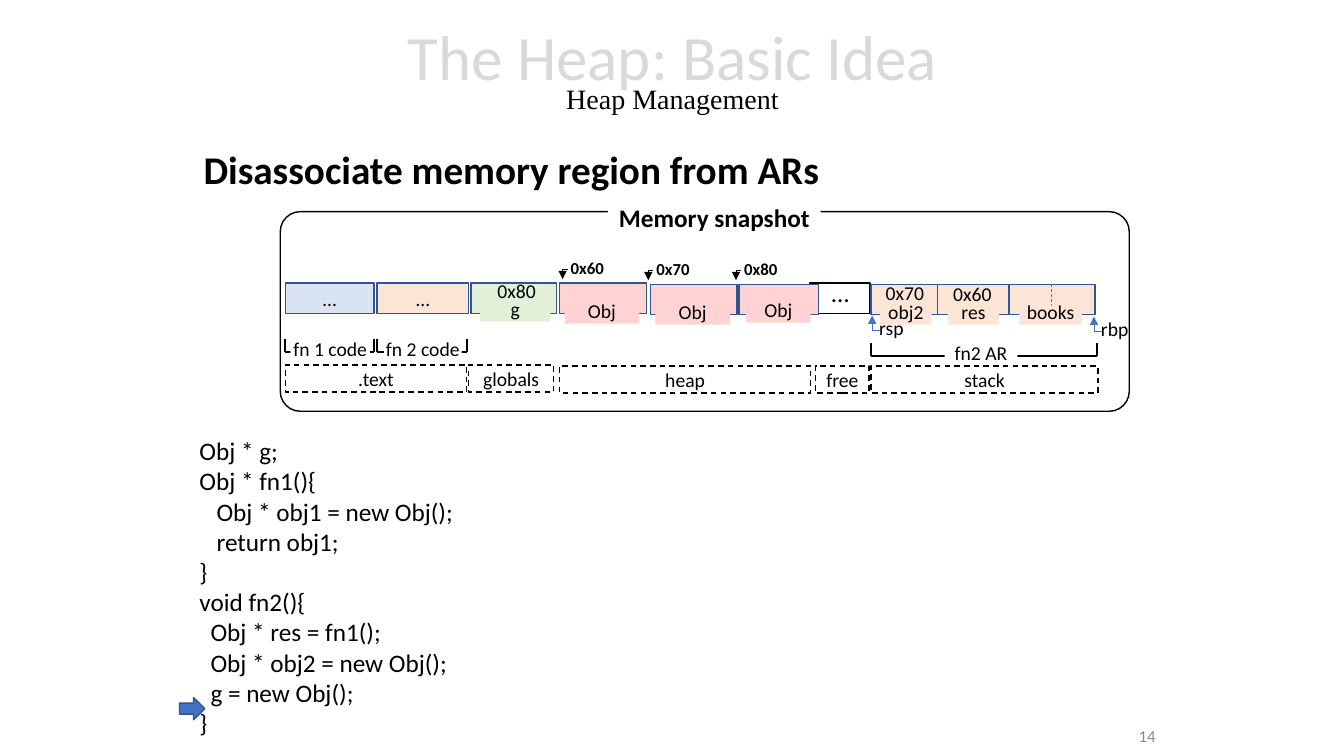
from lxml import etree
from pptx import Presentation
from pptx import util as u
from pptx.dml.color import RGBColor
from pptx.enum import dml, shapes, text
from pptx.oxml.ns import qn

HEX = {"white": "FFFFFF", "black": "000000", "pale": "D9D9D9", "gray": "8C8C8C",
       "blue": "4472C4", "edge": "325491", "sky": "DAE3F3", "peach": "FBE5D6",
       "green": "E2F0D9", "pink": "FFD3D3"}
MID, TOP = text.MSO_ANCHOR.MIDDLE, text.MSO_ANCHOR.TOP
LEFT, MIDST, RIGHT = text.PP_ALIGN.LEFT, text.PP_ALIGN.CENTER, text.PP_ALIGN.RIGHT
RECT = shapes.MSO_SHAPE.RECTANGLE


def rgb(name):
    return RGBColor.from_string(HEX[name])


def run(para, words, size, color="black", bold=False, face="Calibri"):
    bit = para.add_run()
    bit.text = words
    style = {"size": u.Pt(size), "bold": bold, "name": face}
    for key, val in style.items():
        setattr(bit.font, key, val)
    bit.font.color.rgb = rgb(color)


def frame(shape, anchor=MID, inset=0.0):
    body = shape.text_frame
    style = {"word_wrap": True, "vertical_anchor": anchor,
             "margin_left": u.Inches(inset), "margin_right": u.Inches(inset),
             "margin_top": u.Inches(inset / 2), "margin_bottom": u.Inches(inset / 2)}
    for key, val in style.items():
        setattr(body, key, val)
    return body


def area(slide, box, anchor=MID, inset=0.1):
    return frame(slide.shapes.add_textbox(*map(u.Inches, box)), anchor, inset)


def note(body, words, size=14, align=MIDST, space=None, **font):
    para = body.paragraphs[0]
    style = {"alignment": align, "line_spacing": space}
    for key, val in style.items():
        setattr(para, key, val)
    run(para, words, size, **font)
    return para


def block(slide, box, fill, edge=None, dash=False, kind=RECT):
    shape = slide.shapes.add_shape(kind, *map(u.Inches, box))
    shape.shadow.inherit = False
    shape.fill.solid()
    shape.fill.fore_color.rgb = rgb(fill)
    if edge:
        shape.line.color.rgb = rgb(edge)
        shape.line.width = u.Pt(1)
        if dash:
            shape.line.dash_style = dml.MSO_LINE.DASH
    else:
        shape.line.fill.background()
    return shape


def label(slide, box, words, fill):
    note(frame(block(slide, box, fill), TOP), words, space=u.Pt(13))


def rule(slide, x1, y1, x2, y2, color="black", width=0.5, head=False, dash=False):
    line = slide.shapes.add_connector(
        shapes.MSO_CONNECTOR.STRAIGHT, *map(u.Inches, (x1, y1, x2, y2)))
    line.line.color.rgb = rgb(color)
    line.line.width = u.Pt(width)
    if dash:
        line.line.dash_style = dml.MSO_LINE.DASH
    if head:
        etree.SubElement(line.line._get_or_add_ln(), qn("a:tailEnd"), type="triangle")
    etree.SubElement(line._element.spPr, qn("a:effectLst"))


def heading(slide, box):
    x, y, w, h = box
    para = note(area(slide, (x, y, w, 1.45)), "The Heap: Basic Idea", 45,
                space=0.7, color="pale")
    para.add_line_break()
    run(para, "Heap Management", 20, face="Times New Roman")
    lead = note(area(slide, (x + 0.25, y + 1.45, 8.12, 0.52), TOP),
                "Disassociate memory region from ARs", 28, LEFT, 0.8, bold=True)
    lead.space_before = u.Pt(10)


def cells(slide, x, y):
    # Strip of memory cells
    for dx, dy, w, fill, edge, words in [
            (0.05, 0.71, 0.88, "sky", "edge", "…"), (0.96, 0.71, 0.91, "peach", "edge", "…"),
            (1.89, 0.71, 0.85, "green", "edge", ""), (5.25, 0.71, 0.6, "white", "black", ""),
            (2.77, 0.71, 0.86, "pink", "edge", ""), (3.67, 0.72, 0.86, "pink", "edge", ""),
            (4.55, 0.72, 0.79, "pink", "edge", ""), (7.23, 0.72, 0.85, "peach", "edge", ""),
            (6.51, 0.72, 0.71, "peach", "edge", ""), (5.86, 0.72, 0.66, "peach", "edge", "")]:
        cell = block(slide, (x + dx, y + dy, w, 0.3), fill, edge)
        if words:
            note(frame(cell), words)
    note(area(slide, (x + 5.37, y + 0.6, 0.38, 0.4), TOP), "…", 18, LEFT)
    rule(slide, x + 7.65, y + 0.72, x + 7.65, y + 1.01, "blue", dash=True)
    # Names and values in the cells
    for words, dx, dy, w, fill in [
            ("g", 1.98, 0.9, 0.7, "green"), ("0x80", 2.06, 0.72, 0.57, "green"),
            ("Obj", 2.82, 0.92, 0.74, "pink"), ("Obj", 3.72, 0.93, 0.74, "pink"),
            ("Obj", 4.62, 0.91, 0.64, "pink"),
            ("obj2", 5.95, 0.93, 0.51, "peach"), ("0x70", 5.91, 0.74, 0.57, "peach"),
            ("res", 6.62, 0.93, 0.51, "peach"), ("0x60", 6.58, 0.75, 0.57, "peach"),
            ("books", 7.33, 0.93, 0.62, "peach")]:
        label(slide, (x + dx, y + dy, w, 0.19), words, fill)


def marks(slide, x, y):
    # Heap addresses
    for words, dx, dy in [("0x60", 2.8, 0.57), ("0x70", 3.65, 0.58), ("0x80", 4.52, 0.58)]:
        px, py = x + dx, y + dy
        rule(slide, px, py, px, py + 0.1, head=True)
        rule(slide, px, py, px + 0.05, py)
        note(area(slide, (px + 0.08, py - 0.11, 0.5, 0.2), TOP, 0), words, 12, LEFT, bold=True)
    # Stack registers
    for words, dx, dy in [("rsp", 5.87, 1.18), ("rbp", 8.07, 1.19)]:
        px, py = x + dx, y + dy
        rule(slide, px + 0.08, py, px, py, "blue")
        rule(slide, px, py, px, py - 0.15, "blue", head=True)
        note(area(slide, (px + 0.07, py - 0.08, 0.4, 0.2), TOP, 0), words,
             align=LEFT, space=u.Pt(12))


def spans(slide, x, y):
    # Brackets
    for words, left, right, dy, dx, w in [
            ("fn 1 code", 0.05, 0.93, 1.26, 0.1, 0.79),
            ("fn 2 code", 0.96, 1.85, 1.26, 1.03, 0.77),
            ("fn2 AR", 5.86, 8.1, 1.3, 6.59, 0.72)]:
        top, base = y + dy, y + dy + 0.13
        for side in (left, right):
            rule(slide, x + side, top, x + side, base, width=1.5)
        rule(slide, x + left, base, x + right, base, width=1.5)
        label(slide, (x + dx, base - 0.1, w, 0.19), words, "white")
    # Memory segments
    for words, dx, dy, w in [(".text", 0.05, 1.52, 1.8), ("globals", 1.87, 1.52, 0.84),
                             ("heap", 2.77, 1.53, 2.49), ("free", 5.31, 1.53, 0.53),
                             ("stack", 5.86, 1.53, 2.25)]:
        part = block(slide, (x + dx, y + dy, w, 0.27), "white", "black", True)
        note(frame(part), words)


def memory(slide, box):
    x, y, w, h = box
    panel = block(slide, box, "white", "black", kind=shapes.MSO_SHAPE.ROUNDED_RECTANGLE)
    panel.adjustments[0] = 0.1
    title = block(slide, (x + 3.25, y - 0.14, 2.11, 0.4), "white")
    note(frame(title), "Memory snapshot", 18, bold=True)
    for draw in (spans, cells, marks):
        draw(slide, x, y)


def code(slide, box):
    x, y, w, h = box
    body = area(slide, box, TOP)
    lines = [(0, "Obj * g;"), (0, "Obj * fn1(){"), (0.17, "Obj * obj1 = new Obj();"),
             (0.17, "return obj1;"), (0, "}"), (0, "void fn2(){"),
             (0.11, "Obj * res = fn1();"), (0.11, "Obj * obj2 = new Obj();"),
             (0.11, "g = new Obj();"), (0, "}")]
    for i, (dent, words) in enumerate(lines):
        para = body.add_paragraph() if i else body.paragraphs[0]
        para._p.get_or_add_pPr().set("marL", str(u.Inches(dent)))
        run(para, words, 18)
    # Current line
    block(slide, (x - 0.1, y + 2.65, 0.25, 0.22), "blue", "edge",
          kind=shapes.MSO_SHAPE.RIGHT_ARROW)


def main():
    deck = Presentation()
    deck.slide_width, deck.slide_height = u.Inches(13.33), u.Inches(7.5)
    slide = deck.slides.add_slide(deck.slide_layouts[6])
    heading(slide, (1.67, 0.03, 10, 1.97))
    memory(slide, (2.78, 2.1, 8.42, 1.98))
    code(slide, (1.88, 4.27, 3, 3.13))
    # Slide number
    note(area(slide, (9.31, 7.1, 2.25, 0.4)), "14", 12, RIGHT, color="gray")
    deck.save("out.pptx")


if __name__ == "__main__":
    main()
